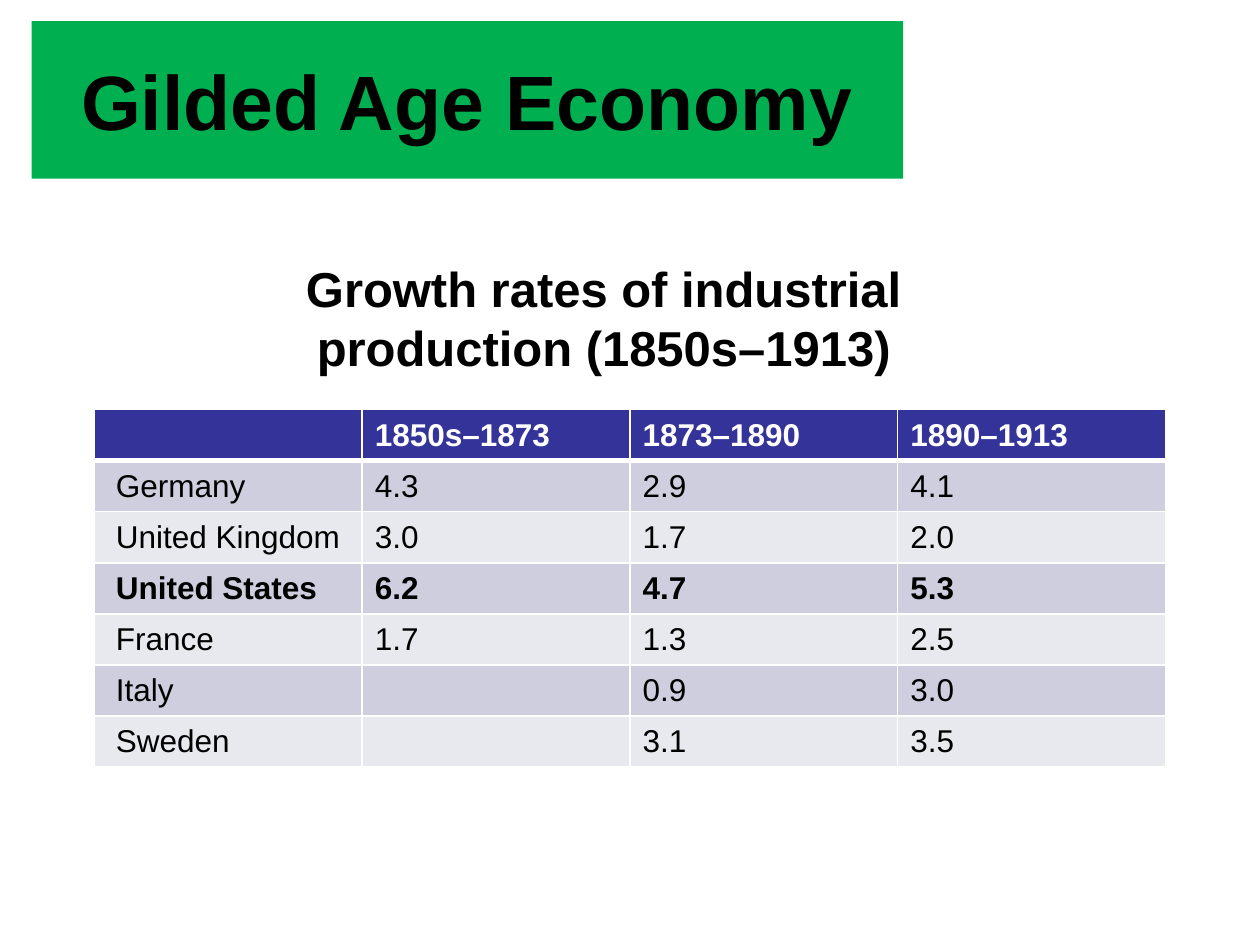
from lxml.etree import SubElement
from pptx import Presentation
from pptx.dml.color import RGBColor
from pptx.enum.text import MSO_ANCHOR, MSO_AUTO_SIZE, PP_ALIGN
from pptx.oxml.ns import qn
from pptx.util import Inches, Pt

COLORS = {
    "banner": "00B050",
    "header": "333399",
    "band_dark": "CECEDE",
    "band_light": "E8E8EF",
    "white": "FFFFFF",
    "black": "000000",
}
GROWTH_RATES = [
    ["", "1850s–1873", "1873–1890", "1890–1913"],
    ["Germany", "4.3", "2.9", "4.1"],
    ["United Kingdom", "3.0", "1.7", "2.0"],
    ["United States", "6.2", "4.7", "5.3"],
    ["France", "1.7", "1.3", "2.5"],
    ["Italy", "", "0.9", "3.0"],
    ["Sweden", "", "3.1", "3.5"],
]


class SlideBuilder:
    font = "Arial"
    unit = Inches(0.25)

    def __init__(self, prs):
        self.s = prs.slides.add_slide(prs.slide_layouts[5])

    def grid(self, *cells):
        return [round(n * self.unit) for n in cells]

    def color(self, name):
        return RGBColor.from_string(COLORS[name])

    def style(self, p, size, color="black", bold=True, align=PP_ALIGN.LEFT):
        p.alignment = align
        p.font.name = self.font
        p.font.size = Pt(size)
        p.font.bold = bold
        p.font.color.rgb = self.color(color)

    def title(self, text, *box):
        sp = self.s.shapes.title
        sp.left, sp.top, sp.width, sp.height = self.grid(*box)
        sp.fill.solid()
        sp.fill.fore_color.rgb = self.color("banner")
        tf = sp.text_frame
        tf.text = text
        tf.auto_size = MSO_AUTO_SIZE.NONE
        tf.vertical_anchor = MSO_ANCHOR.MIDDLE
        self.style(tf.paragraphs[0], 44, align=PP_ALIGN.CENTER)

    def caption(self, text, *box):
        tf = self.s.shapes.add_textbox(*self.grid(*box)).text_frame
        tf.word_wrap = True
        tf.text = text
        self.style(tf.paragraphs[0], 28, align=PP_ALIGN.CENTER)

    def borders(self, cell, top, bottom):
        tcPr = cell._tc.get_or_add_tcPr()
        for side, width in (("L", 1), ("R", 1), ("T", top), ("B", bottom)):
            ln = SubElement(tcPr, qn(f"a:ln{side}"), w=str(Pt(width)))
            fill = SubElement(ln, qn("a:solidFill"))
            SubElement(fill, qn("a:srgbClr"), val=COLORS["white"])

    def table(self, rows, bold_rows, *box):
        table = self.s.shapes.add_table(len(rows), len(rows[0]), *self.grid(*box)).table
        for i, row in enumerate(rows):
            fill = "header" if i == 0 else "band_dark" if i % 2 else "band_light"
            for j, text in enumerate(row):
                cell = table.cell(i, j)
                self.borders(cell, 3 if i == 1 else 1, 3 if i == 0 else 1)
                cell.fill.solid()
                cell.fill.fore_color.rgb = self.color(fill)
                cell.vertical_anchor = MSO_ANCHOR.MIDDLE
                cell.margin_left = Inches(0.1 if j else 0.17)
                cell.text = text
                self.style(cell.text_frame.paragraphs[0], 18,
                           "black" if i else "white", i in bold_rows)


def main():
    prs = Presentation()
    prs.slide_width, prs.slide_height = Inches(10), Inches(7.5)
    slide = SlideBuilder(prs)
    slide.title("Gilded Age Economy", 1, 0.67, 27.67, 5)
    slide.table(GROWTH_RATES, (0, 3), 3, 13, 34, 11.36)
    slide.caption("Growth rates of industrial production (1850s–1913)",
                  6.33, 8, 25.67, 5.8)
    prs.save("out.pptx")


if __name__ == "__main__":
    main()
